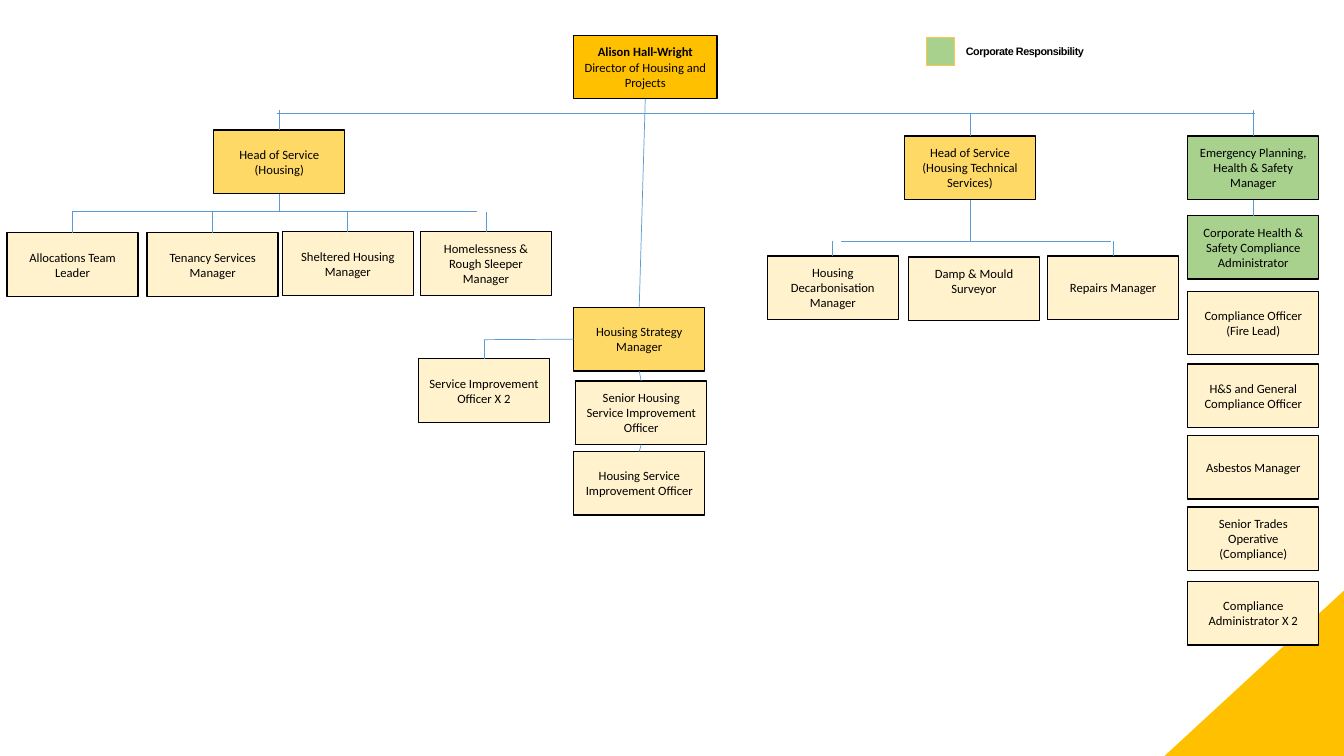
from lxml import etree
from pptx import Presentation
from pptx.dml.color import RGBColor
from pptx.enum.shapes import MSO_CONNECTOR, MSO_SHAPE
from pptx.enum.text import MSO_ANCHOR, PP_ALIGN
from pptx.oxml.ns import qn
from pptx.util import Inches, Pt

STRAIGHT = MSO_CONNECTOR.STRAIGHT
RECTANGLE, RIGHT_TRIANGLE = MSO_SHAPE.RECTANGLE, MSO_SHAPE.RIGHT_TRIANGLE
MIDDLE, CENTER = MSO_ANCHOR.MIDDLE, PP_ALIGN.CENTER
TOP, LEFT, BOTTOM = 0, 1, 2

COLORS = {
    "director": "FFC000",
    "head": "FFD966",
    "team": "FFF2CC",
    "corporate": "A9D18E",
    "legend line": "FFC649",
    "link": "5B9BD5",
    "ink": "000000",
}
COLORS = {name: RGBColor.from_string(value) for name, value in COLORS.items()}
SLIDE_WIDTH, SLIDE_HEIGHT = 13.33, 7.5
BOX_WIDTH, BOX_HEIGHT = 1.3, 0.63
CENTER_COLUMN, RIGHT_COLUMN = 5.69, 11.78
MAIN_BUS, HOUSING_BUS, TECHNICAL_BUS = 1.12, 2.1, 2.39

deck = Presentation()
deck.slide_width, deck.slide_height = Inches(SLIDE_WIDTH), Inches(SLIDE_HEIGHT)
page = deck.slides.add_slide(deck.slide_layouts[6])


def add_box(text, left, top, level="team", width=BOX_WIDTH):
    box = page.shapes.add_shape(
        RECTANGLE, Inches(left), Inches(top), Inches(width), Inches(BOX_HEIGHT))
    box.shadow.inherit = False
    box.fill.solid()
    box.fill.fore_color.rgb = COLORS[level]
    box.line.color.rgb = COLORS["ink"]
    box.line.width = Pt(1)
    frame = box.text_frame
    frame.word_wrap = True
    frame.vertical_anchor = MIDDLE
    frame.text = text
    for para in frame.paragraphs:
        para.alignment = CENTER
        para.font.name = "Calibri"
        para.font.size = Pt(9)
        para.font.color.rgb = COLORS["ink"]
    return box


def add_link(start, end, start_box=None, start_site=BOTTOM, end_box=None):
    link = page.shapes.add_connector(
        STRAIGHT, *[Inches(length) for length in (*start, *end)])
    link.line.color.rgb = COLORS["link"]
    link.line.width = Pt(0.5)
    etree.SubElement(link._element.spPr, qn("a:effectLst"))
    if start_box:
        link.begin_connect(start_box, start_site)
    if end_box:
        link.end_connect(end_box, TOP)


corner = page.shapes.add_shape(
    RIGHT_TRIANGLE, Inches(SLIDE_WIDTH - 1.78), Inches(SLIDE_HEIGHT - 1.64),
    Inches(1.78), Inches(1.64))
corner.shadow.inherit = False
corner.fill.solid()
corner.fill.fore_color.rgb = COLORS["director"]
corner.line.fill.background()
corner._element.spPr.xfrm.set("flipH", "1")

director = add_box("Alison Hall-Wright\nDirector of Housing and Projects",
                   CENTER_COLUMN, 0.35, "director", 1.42)
director.text_frame.paragraphs[0].font.bold = True
housing = add_box("Head of Service (Housing)", 2.12, 1.29, "head")
technical = add_box("Head of Service (Housing Technical Services)", 8.97, 1.35, "head")
strategy = add_box("Housing Strategy Manager", CENTER_COLUMN, 3.05, "head")
senior = add_box("Senior Housing Service Improvement Officer", CENTER_COLUMN + 0.02, 3.78)
officer = add_box("Housing Service Improvement Officer", CENTER_COLUMN, 4.48)
improvement = add_box("Service Improvement Officer X 2", 4.15, 3.56)

compliance = [
    add_box(text, RIGHT_COLUMN, top, level)
    for text, top, level in [
        ("Emergency Planning, Health & Safety Manager", 1.35, "corporate"),
        ("Corporate Health & Safety Compliance Administrator", 2.14, "corporate"),
        ("Compliance Officer\n(Fire Lead)", 2.89, "team"),
        ("H&S and General Compliance Officer", 3.61, "team"),
        ("Asbestos Manager", 4.32, "team"),
        ("Senior Trades Operative (Compliance)", 5.03, "team"),
        ("Compliance Administrator X 2", 5.77, "team"),
    ]
]
emergency, administrator = compliance[:2]

housing_team = [
    ("Allocations Team Leader", 0.07, 2.31),
    ("Tenancy Services Manager", 1.46, 2.31),
    ("Sheltered Housing Manager", 2.8, 2.3),
    ("Homelessness & Rough Sleeper Manager", 4.17, 2.3),
]
technical_team = [
    ("Housing Decarbonisation Manager", 7.61, 2.54),
    ("Damp & Mould Surveyor", 9.01, 2.55),
    ("Repairs Manager", 10.39, 2.54),
]
housing_boxes = [add_box(*member) for member in housing_team]
decarbonisation, surveyor, repairs = [add_box(*member) for member in technical_team]
surveyor.text_frame.margin_bottom = Inches(0.2)

drops = [(box, HOUSING_BUS) for box in housing_boxes]
drops += [(decarbonisation, TECHNICAL_BUS), (repairs, TECHNICAL_BUS),
          (housing, MAIN_BUS - 0.03), (technical, MAIN_BUS),
          (emergency, MAIN_BUS - 0.03), (improvement, 3.37)]
for box, bus in drops:
    middle = (box.left + box.width / 2) / Inches(1)
    add_link((middle, bus), (middle, box.top / Inches(1)), end_box=box)

for box, bus in [(housing, HOUSING_BUS), (technical, TECHNICAL_BUS)]:
    middle = (box.left + box.width / 2) / Inches(1)
    add_link((middle, bus), (middle, bus), start_box=box)

for upper, lower in [(director, strategy), (strategy, senior),
                     (senior, officer), (emergency, administrator)]:
    add_link((0, 0), (0, 0), start_box=upper, end_box=lower)

for left, right, bus in [(2.75, 12.45, MAIN_BUS), (0.71, 4.73, HOUSING_BUS),
                         (8.34, 11.02, TECHNICAL_BUS)]:
    add_link((left, bus), (right, bus))
add_link((CENTER_COLUMN, 3.37), (4.8, 3.37), start_box=strategy, start_site=LEFT)

swatch = page.shapes.add_shape(
    RECTANGLE, Inches(9.19), Inches(0.37), Inches(0.28), Inches(0.28))
swatch.shadow.inherit = False
swatch.fill.solid()
swatch.fill.fore_color.rgb = COLORS["corporate"]
swatch.line.color.rgb = COLORS["legend line"]
swatch.line.width = Pt(0.5)

legend = page.shapes.add_textbox(Inches(9.58), Inches(0.44), Inches(1.18), Inches(0.13))
frame = legend.text_frame
frame.word_wrap = False
frame.margin_left = frame.margin_top = frame.margin_right = frame.margin_bottom = 0
para = frame.paragraphs[0]
span = para.add_run()
span.text = "Corporate Responsibility"
span._r.get_or_add_rPr().set("spc", "-30")
para.font.name = "Arial"
para.font.size = Pt(7.7)
para.font.bold = True
para.font.color.rgb = COLORS["ink"]

deck.save("out.pptx")
